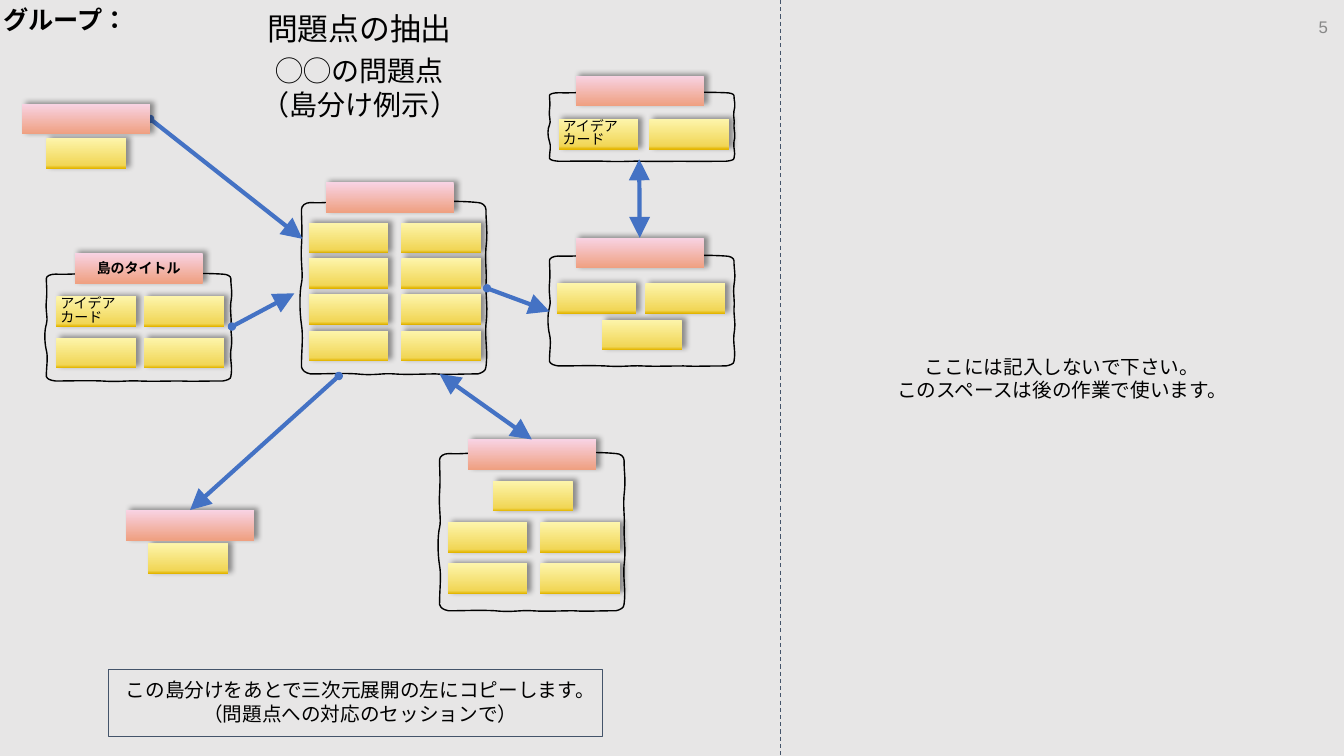
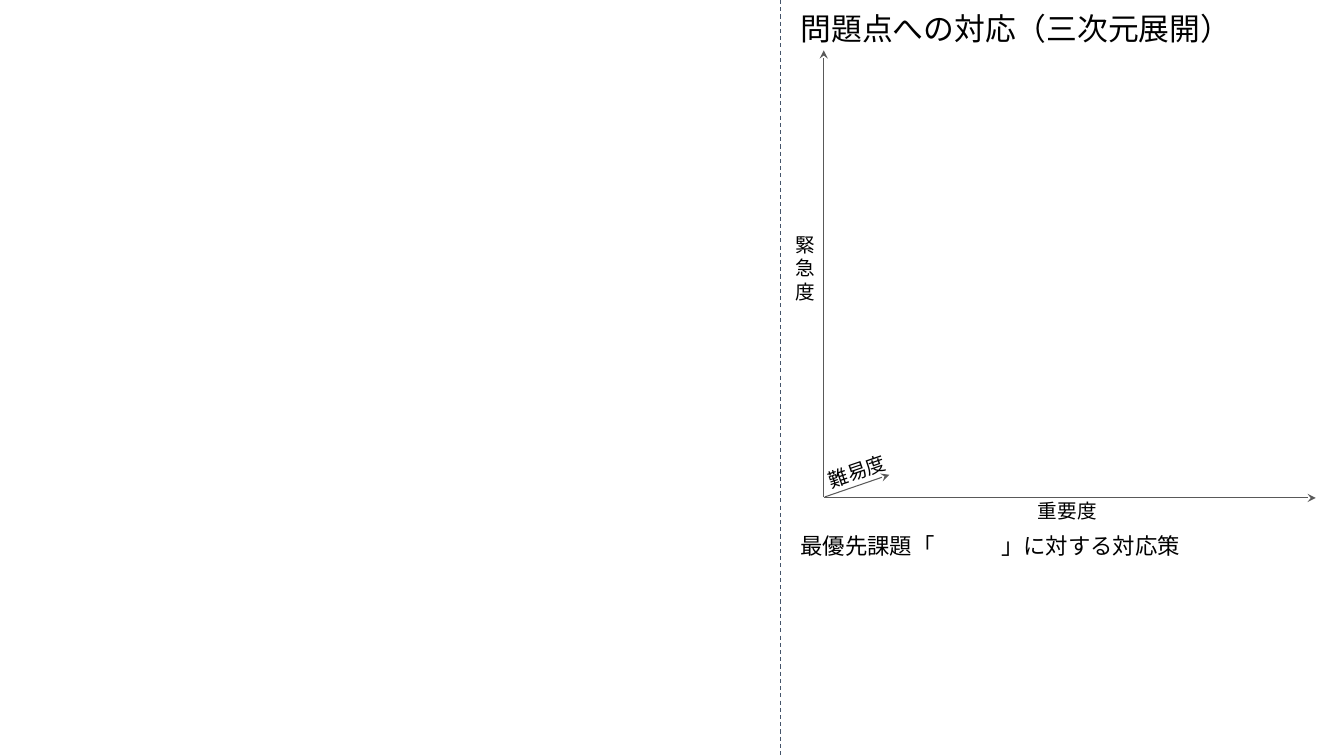
import itertools

import pptx
import pptx.dml.color
import pptx.enum.dml
import pptx.enum.lang
import pptx.enum.shapes
import pptx.enum.text
import pptx.oxml
import pptx.oxml.ns
import pptx.util

Inches = pptx.util.Inches
Pt = pptx.util.Pt
ALIGN = pptx.enum.text.PP_ALIGN
ANCHOR = pptx.enum.text.MSO_ANCHOR

FONT = "Arial"
BLACK, WHITE, PALE, NAVY = "000000", "FFFFFF", "E7E6E6", "44546A"
ARROW_BLUE, AXIS_GRAY, NUMBER_GRAY = "4472C4", "595959", "888888"
CARD_STOPS = [(0, "FDF5AC"), (90, "F1D656"), (100, "E3B500")]
TITLE_STOPS = [(0, "F8D3E4"), (100, "EFA081")]
CARD_SIZE, TITLE_SIZE = (0.79, 0.3), (1.27, 0.3)
ISLAND_WIDTH = 1.83
CARD_LABEL = ["アイデア", "カード"]

WOBBLE_SIZE = (183, 170)
WOBBLE_START = (0, 7)
WOBBLE_CURVES = [
    ((0, 3), (4, 0), (9, 0)),
    ((27, 1), (31, -2), (52, 0)),
    ((73, 1), (71, -1), (90, 0)),
    ((109, 1), (119, 1), (128, 0)),
    ((138, -1), (156, -2), (175, 0)),
    ((179, 0), (183, 3), (183, 7)),
    ((183, 22), (185, 27), (183, 45)),
    ((182, 62), (184, 66), (183, 82)),
    ((183, 97), (185, 103), (183, 121)),
    ((182, 138), (185, 147), (183, 163)),
    ((183, 167), (179, 169), (175, 170)),
    ((155, 170), (145, 171), (133, 170)),
    ((121, 170), (104, 171), (92, 170)),
    ((80, 169), (73, 172), (55, 170)),
    ((38, 169), (28, 170), (9, 170)),
    ((4, 169), (1, 167), (0, 163)),
    ((0, 146), (2, 133), (0, 121)),
    ((-2, 108), (-2, 89), (0, 80)),
    ((2, 72), (-1, 59), (0, 43)),
    ((1, 27), (0, 16), (0, 7)),
]


def grid(columns, rows):
    """Return the corner of every cell, row by row."""
    return [(x, y) for y, x in itertools.product(rows, columns)]


ISLANDS = {
    "main": ((3.23, 1.81), grid([3.06, 3.98], [2.21, 2.56, 2.92, 3.28])),
    "left": ((0.74, 2.51), grid([0.56, 1.43], [2.94, 3.35])),
    "upper right": ((5.71, 0.75), grid([5.54, 6.44], [1.18])),
    "right": ((5.71, 2.36), grid([5.52, 6.4], [2.81]) + [(5.97, 3.17)]),
    "lower right": ((4.64, 4.36), [(4.89, 4.77)] + grid([4.44, 5.36], [5.18, 5.59])),
    "upper left": ((0.22, 1.03), [(0.46, 1.37)]),
    "lower left": ((1.25, 5.06), [(1.47, 5.39)]),
}
OUTLINES = [(5.45, 2.54, 1.09), (2.99, 2.01, 1.7), (5.45, 0.92, 0.68),
            (4.36, 4.5, 1.56), (0.46, 2.72, 1.06)]
LABELS = {"left": (["島のタイトル"], CARD_LABEL), "upper right": (None, CARD_LABEL)}


def rgb(color):
    """Turn a hex string into a colour."""
    return pptx.dml.color.RGBColor.from_string(color)


def parse(markup):
    """Build a drawing element, with its namespace at the %s mark."""
    return pptx.oxml.parse_xml(markup % pptx.oxml.ns.nsdecls("a"))


def set_text(shape, lines, size, align=ALIGN.CENTER, inset=(0.1, 0.1), anchor=ANCHOR.TOP,
             bold=False, color=BLACK, spacing=None):
    """Fill a shape with paragraphs of one style."""
    frame = shape.text_frame
    frame.text = "\n".join(lines)
    frame.word_wrap = True
    frame.auto_size = pptx.enum.text.MSO_AUTO_SIZE.NONE
    frame.vertical_anchor = anchor
    frame.margin_left = frame.margin_right = Inches(inset[0])
    frame.margin_top = frame.margin_bottom = Inches(inset[1])
    for paragraph in frame.paragraphs:
        paragraph.alignment = align
        if spacing:
            paragraph.line_spacing = spacing
        font = paragraph.font
        font.name, font.size, font.bold = FONT, Pt(size), bold
        font.color.rgb = rgb(color)
        font.language_id = pptx.enum.lang.MSO_LANGUAGE_ID.JAPANESE


def add_text(slide, box, lines, size, **style):
    """Add a text box."""
    label = slide.shapes.add_textbox(*map(Inches, box))
    set_text(label, lines, size, **style)
    return label


def add_line(slide, start, end, color, width, head=None, tail=None, dash=None):
    """Add a straight line; each end is a kind and a size."""
    line = slide.shapes.add_connector(
        pptx.enum.shapes.MSO_CONNECTOR.STRAIGHT, *map(Inches, start + end))
    line.line.color.rgb = rgb(color)
    line.line.width = Pt(width)
    if dash:
        line.line.dash_style = dash
    properties = line.element.spPr
    stroke = properties.find(pptx.oxml.ns.qn("a:ln"))
    for tag, tip in (("headEnd", head), ("tailEnd", tail)):
        if tip:
            kind, size = tip
            stroke.append(parse(f'<a:{tag} %s type="{kind}" w="{size}" len="{size}"/>'))
    properties.append(parse("<a:effectLst %s/>"))
    return line


def add_divider(slide):
    """Add the dashed line between the two halves."""
    add_line(slide, (7.74, 0), (7.74, 7.5), NAVY, 0.75, dash=pptx.enum.dml.MSO_LINE.DASH)


def add_card(slide, corner, size, stops, lines=None, **style):
    """Add a shaded card with a soft shadow."""
    card = slide.shapes.add_shape(
        pptx.enum.shapes.MSO_SHAPE.RECTANGLE, *map(Inches, corner + size))
    colors = "".join(f'<a:gs pos="{pos * 1000}"><a:srgbClr val="{color}"/></a:gs>'
                     for pos, color in stops)
    properties = card.element.spPr
    properties.append(parse(f'<a:gradFill %s rotWithShape="1"><a:gsLst>{colors}</a:gsLst>'
                            '<a:lin ang="5400000" scaled="0"/></a:gradFill>'))
    card.line.fill.background()
    card.shadow.inherit = False
    properties.find(pptx.oxml.ns.qn("a:effectLst")).append(parse(
        f'<a:outerShdw %s blurRad="{Pt(4)}" dist="{Pt(3)}" dir="{340 * 60000}" '
        f'algn="ctr" rotWithShape="0"><a:srgbClr val="{BLACK}"><a:alpha val="40000"/>'
        '</a:srgbClr></a:outerShdw>'))
    if lines:
        set_text(card, lines, 10, inset=(0.04, 0.04), anchor=ANCHOR.MIDDLE, **style)
    return card


def add_outline(slide, left, top, height):
    """Add the hand-drawn, curved border of an island."""
    def scale(point):
        """Scale an outline point to the island."""
        return (Inches(point[0] * ISLAND_WIDTH / WOBBLE_SIZE[0]),
                Inches(point[1] * height / WOBBLE_SIZE[1]))

    builder = slide.shapes.build_freeform(*scale(WOBBLE_START))
    builder.add_line_segments([scale(curve[-1]) for curve in WOBBLE_CURVES], close=True)
    outline = builder.convert_to_shape(Inches(left), Inches(top))
    segments = list(outline.element.iter(pptx.oxml.ns.qn("a:lnTo")))
    for segment, curve in zip(segments, WOBBLE_CURVES):
        points = "".join('<a:pt x="%d" y="%d"/>' % scale(point) for point in curve)
        segment.getparent().replace(
            segment, parse(f"<a:cubicBezTo %s>{points}</a:cubicBezTo>"))
    outline.fill.background()
    outline.line.color.rgb = rgb(BLACK)
    outline.line.width = Pt(1)
    outline.shadow.inherit = False


def add_island(slide, title_corner, cards, title_lines=None, card_lines=None):
    """Add the cards of an island and return its title card."""
    for index, corner in enumerate(cards):
        add_card(slide, corner, CARD_SIZE, CARD_STOPS, None if index else card_lines,
                 align=ALIGN.LEFT, spacing=0.8)
    return add_card(slide, title_corner, TITLE_SIZE, TITLE_STOPS, title_lines, bold=True)


def start_slide(deck, background, title, box, align):
    """Add a slide with its background and title."""
    slide = deck.slides.add_slide(deck.slide_layouts[5])
    slide.background.fill.solid()
    slide.background.fill.fore_color.rgb = rgb(background)
    heading = slide.shapes.title
    heading.left, heading.top, heading.width, heading.height = map(Inches, box)
    set_text(heading, [title], 22, align=align)
    return slide


def add_arrow(slide, start, end, both_ways=False):
    """Add a thick blue arrow that starts with a dot or a second head."""
    tip = ("triangle", "lg")
    return add_line(slide, start, end, ARROW_BLUE, 3, tip if both_ways else ("oval", "sm"), tip)


def add_islands(slide):
    """Add the islands and the arrows between them."""
    for outline in OUTLINES:
        add_outline(slide, *outline)
    from_upper_left = add_arrow(slide, (1.49, 1.18), (3, 2.37))
    titles = {name: add_island(slide, *island, *LABELS.get(name, ()))
              for name, island in ISLANDS.items()}
    from_upper_left.begin_connect(titles["upper left"], 3)
    add_arrow(slide, (3.36, 3.73), (1.89, 5.06)).end_connect(titles["lower left"], 0)
    add_arrow(slide, (6.35, 2.36), (6.34, 1.58), True).begin_connect(titles["right"], 0)
    add_arrow(slide, (5.28, 4.36), (4.36, 3.71), True).begin_connect(titles["lower right"], 0)
    add_arrow(slide, (4.83, 2.86), (5.45, 3.09))
    add_arrow(slide, (2.3, 3.24), (2.92, 2.91))


def build_extraction(deck):
    """Build the slide that groups problems into islands."""
    slide = start_slide(deck, PALE, "問題点の抽出", (2.4, 0, 2.33, 0.57), ALIGN.CENTER)
    note_frame = slide.shapes.add_shape(
        pptx.enum.shapes.MSO_SHAPE.RECTANGLE, *map(Inches, (1.08, 6.64, 4.9, 0.67)))
    note_frame.fill.solid()
    note_frame.fill.fore_color.rgb = rgb(PALE)
    note_frame.line.color.rgb = rgb(NAVY)
    note_frame.line.width = Pt(0.75)
    note_frame.shadow.inherit = False
    add_text(slide, (0, 0, 2.82, 0.49), ["グループ："], 18, align=ALIGN.LEFT,
             inset=(0.03, 0.04), bold=True)
    add_text(slide, (1.29, 0.49, 4.56, 0.49), ["◯◯の問題点", "（島分け例示）"], 20,
             inset=(0.04, 0.04))
    add_text(slide, (1.09, 6.63, 4.97, 0.67),
             ["この島分けをあとで三次元展開の左にコピーします。",
              "（問題点への対応のセッションで）"], 14)
    add_islands(slide)
    add_text(slide, (10.27, 0.07, 3, 0.4), ["5"], 12, align=ALIGN.RIGHT,
             inset=(0.1, 0.05), anchor=ANCHOR.MIDDLE, color=NUMBER_GRAY)
    add_text(slide, (8.67, 3.42, 3.73, 0.67),
             ["ここには記入しないで下さい。", "このスペースは後の作業で使います。"], 14)
    add_divider(slide)


def build_response(deck):
    """Build the slide with the three axes for ranking problems."""
    slide = start_slide(deck, WHITE, "問題点への対応（三次元展開）",
                        (7.84, 0, 5.49, 0.57), ALIGN.LEFT)
    for start, end in (((8.17, 4.94), (13.05, 4.94)), ((8.17, 4.93), (8.17, 0.5)),
                       ((8.18, 4.93), (8.82, 4.71))):
        add_line(slide, start, end, AXIS_GRAY, 0.75, tail=("stealth", "med"))
    add_text(slide, (10.11, 4.85, 0.95, 0.4), ["重要度"], 14)
    add_text(slide, (7.79, 2.21, 0.38, 1.01), ["緊急度"], 14)
    add_text(slide, (8.02, 4.46, 0.95, 0.4), ["難易度"], 14).rotation = 341.1
    add_text(slide, (7.84, 5.18, 5.35, 2.3), ["最優先課題「　　　」に対する対応策"], 16,
             align=ALIGN.LEFT)
    add_divider(slide)


def main():
    """Build and save the deck."""
    deck = pptx.Presentation()
    deck.slide_width, deck.slide_height = Inches(13.33), Inches(7.5)
    build_extraction(deck)
    build_response(deck)
    deck.save("out.pptx")


if __name__ == "__main__":
    main()
